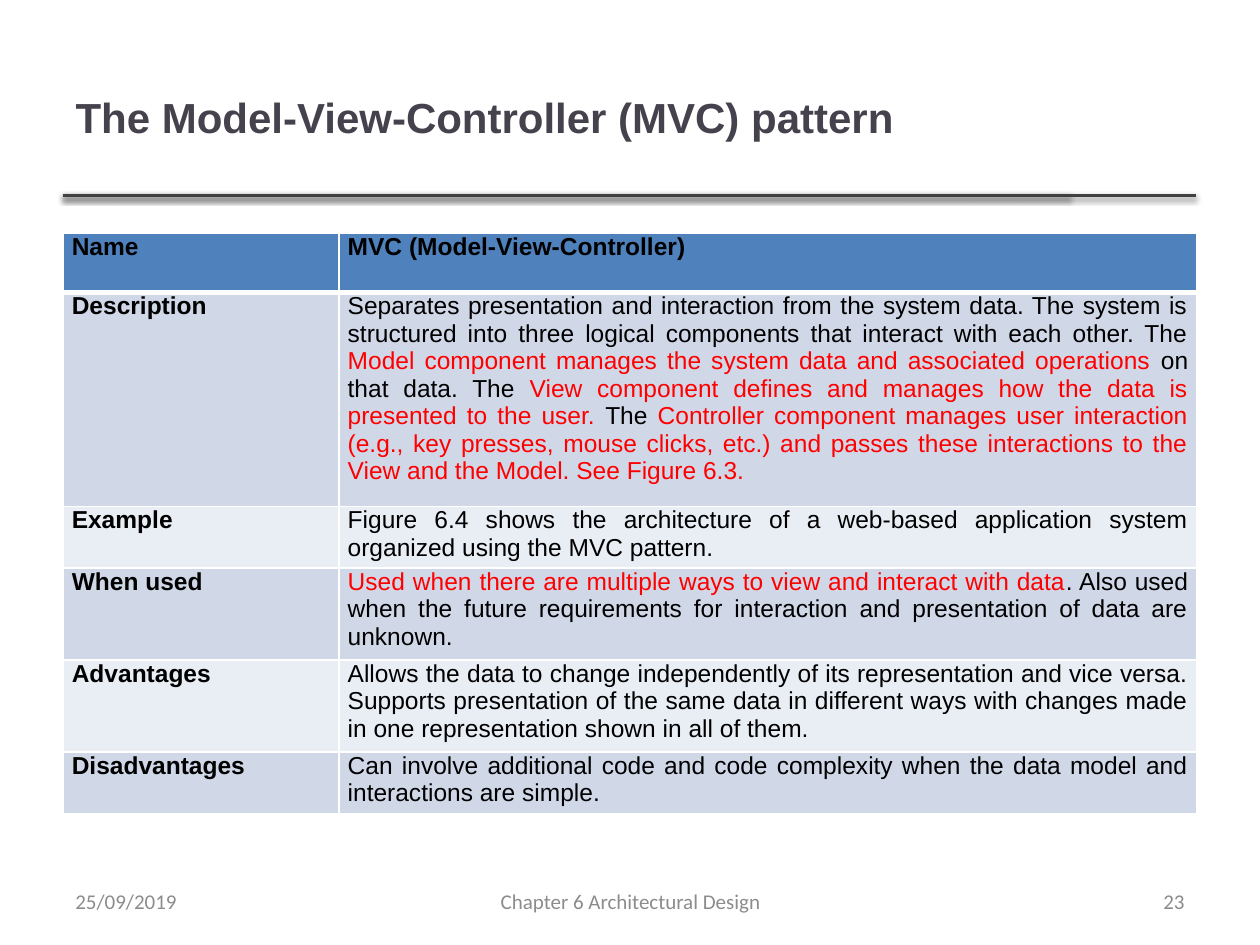
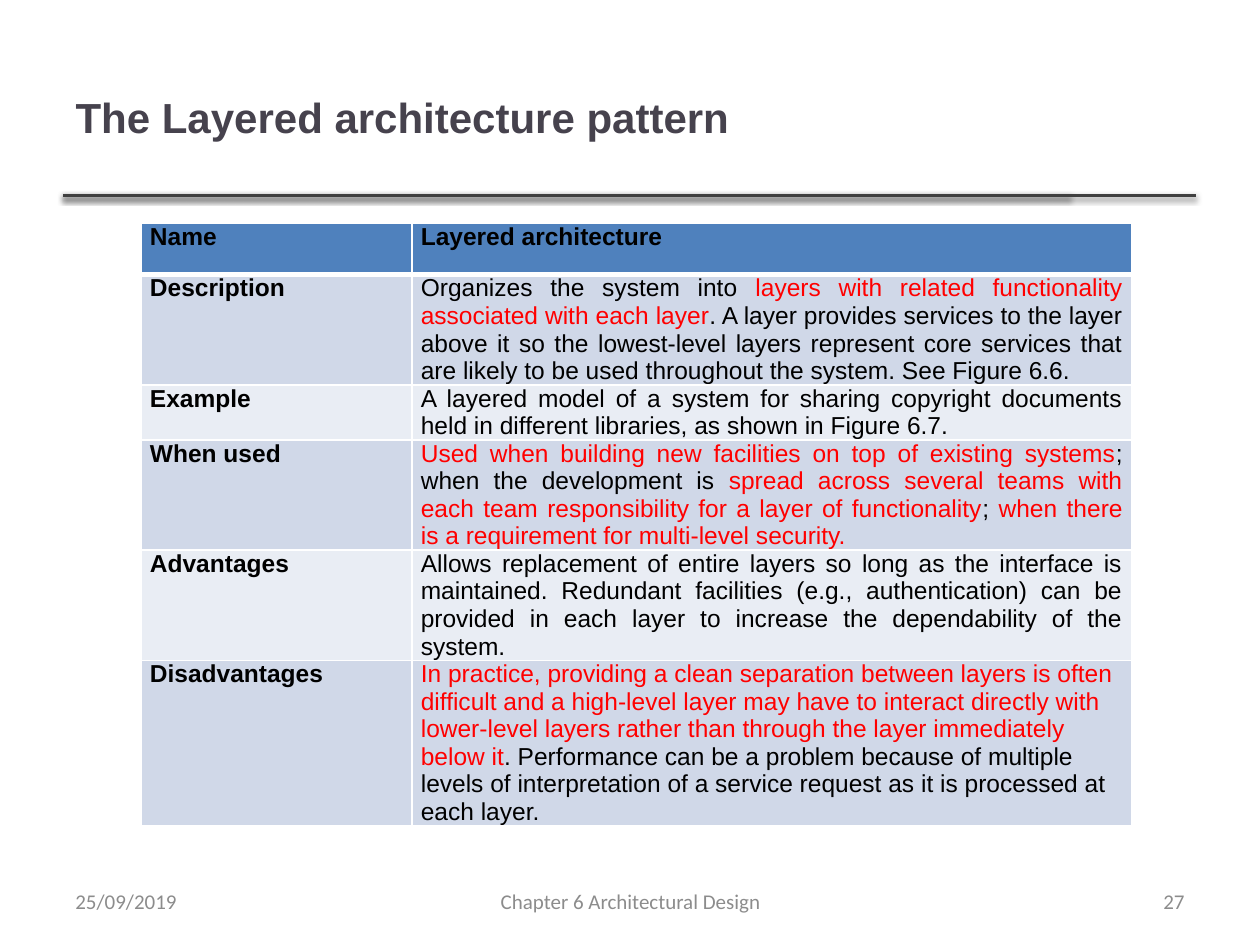
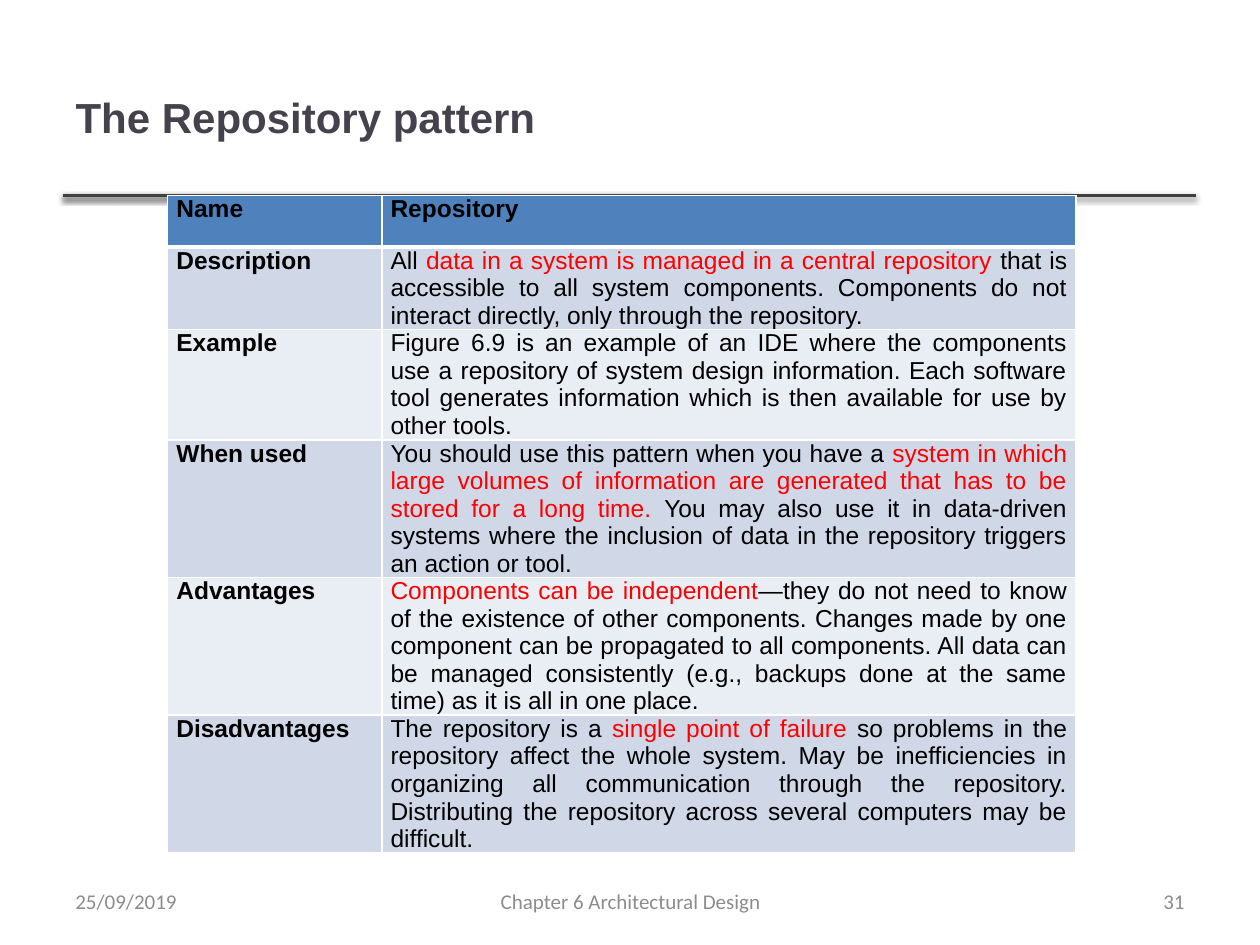
from dataclasses import dataclass

from lxml import etree
from pptx import Presentation
from pptx.dml.color import RGBColor
from pptx.enum import shapes, text
from pptx.oxml import ns
from pptx.util import Inches, Pt


@dataclass(frozen=True)
class Theme:
    title: str = "46424D"
    rule: str = "404040"
    footer: str = "8C8C8C"
    body: str = "000000"
    accent: str = "FF0000"
    header_fill: str = "4F81BD"
    band_fills: tuple = ("E9EDF4", "D0D8E8")
    border: str = "FFFFFF"
    font: str = "Arial"
    footer_font: str = "Calibri"
    title_size: int = 24
    table_size: int = 14
    footer_size: int = 12


THEME = Theme()
ALIGN = text.PP_ALIGN

# Content: text between asterisks is highlighted
LABELS = ["Name", "Description", "Example", "When used", "Advantages", "Disadvantages"]
PATTERNS = [
    {
        "title": "The Model-View-Controller (MVC) pattern",
        "number": "23",
        "box": (0.5, 1.85, 9, 4.6),
        "label_width": 2.19,
        "row_heights": [0.47, 1.7, 0.49, 0.73, 0.73, 0.49],
        "last_align": ALIGN.JUSTIFY,
        "entries": [
            "MVC (Model-View-Controller)",
            "Separates presentation and interaction from the system data. The system is "
            "structured into three logical components that interact with each other. The "
            "*Model component manages the system data and associated operations *on that "
            "data. The *View component defines and manages how the data is presented to the "
            "user. *The *Controller component manages user interaction (e.g., key presses, "
            "mouse clicks, etc.) and passes these interactions to the View and the Model. "
            "See Figure 6.3.*",
            "Figure 6.4 shows the architecture of a web-based application system organized "
            "using the MVC pattern.",
            "*Used when there are multiple ways to view and interact with data*. Also used "
            "when the future requirements for interaction and presentation of data are "
            "unknown.",
            "Allows the data to change independently of its representation and vice versa. "
            "Supports presentation of the same data in different ways with changes made in "
            "one representation shown in all of them.",
            "Can involve additional code and code complexity when the data model and "
            "interactions are simple.",
        ],
    },
    {
        "title": "The Layered architecture pattern",
        "number": "27",
        "box": (1.12, 1.77, 7.86, 5.07),
        "label_width": 2.15,
        "row_heights": [0.41] * 6,
        "last_align": ALIGN.LEFT,
        "entries": [
            "Layered architecture",
            "Organizes the system into *layers with related functionality associated with "
            "each layer*. A layer provides services to the layer above it so the "
            "lowest-level layers represent core services that are likely to be used "
            "throughout the system. See Figure 6.6.",
            "A layered model of a system for sharing copyright documents held in different "
            "libraries, as shown in Figure 6.7.",
            "*Used when building new facilities on top of existing systems*; when the "
            "development is *spread across several teams with each team responsibility for "
            "a layer of functionality*; *when there is a requirement for multi-level "
            "security.*",
            "Allows replacement of entire layers so long as the interface is maintained. "
            "Redundant facilities (e.g., authentication) can be provided in each layer to "
            "increase the dependability of the system.",
            "*In practice, providing a clean separation between layers is often difficult "
            "and a high-level layer may have to interact directly with lower-level layers "
            "rather than through the layer immediately below it*. Performance can be a "
            "problem because of multiple levels of interpretation of a service request as "
            "it is processed at each layer.",
        ],
    },
    {
        "title": "The Repository pattern",
        "number": "31",
        "box": (1.33, 1.55, 7.21, 5.54),
        "label_width": 1.7,
        "row_heights": [0.41] * 6,
        "last_align": ALIGN.JUSTIFY,
        "entries": [
            "Repository",
            "All *data in a system is managed in a central repository *that is accessible "
            "to all system components. Components do not interact directly, only through "
            "the repository.",
            "Figure 6.9 is an example of an IDE where the components use a repository of "
            "system design information. Each software tool generates information which is "
            "then available for use by other tools.",
            "You should use this pattern when you have a *system in which large volumes of "
            "information are generated that has to be stored for a long time. *You may also "
            "use it in data-driven systems where the inclusion of data in the repository "
            "triggers an action or tool.",
            "*Components can be independent*—they do not need to know of the existence of "
            "other components. Changes made by one component can be propagated to all "
            "components. All data can be managed consistently (e.g., backups done at the "
            "same time) as it is all in one place.",
            "The repository is a *single point of failure *so problems in the repository "
            "affect the whole system. May be inefficiencies in organizing all communication "
            "through the repository. Distributing the repository across several computers "
            "may be difficult.",
        ],
    },
]
FOOTER = {"date": "25/09/2019", "chapter": "Chapter 6 Architectural Design"}

# Shared geometry, in inches
TITLE_BOX = (0.5, 0.3, 7.98, 1.25)
RULE_LEFT, RULE_TOP, RULE_ENDS = 0.5, 1.55, (8.49, 9.49)
FOOTER_TOP, FOOTER_HEIGHT = 6.95, 0.4
CELL_MARGIN = 0.07


def set_values(target, **values):
    for name, value in values.items():
        setattr(target, name, value)


def inches(values):
    return [Inches(value) for value in values]


def set_font(font, name, size, color, bold=False):
    set_values(font, name=name, size=Pt(size), bold=bold)
    font.color.rgb = RGBColor.from_string(color)


def add_child(parent, tag, **attributes):
    child = etree.SubElement(parent, ns.qn(tag))
    for name, value in attributes.items():
        child.set(name, str(value))
    return child


# Title, footer and rule
def fill_title(slide, title):
    shape = slide.shapes.title
    left, top, width, height = inches(TITLE_BOX)
    set_values(shape, left=left, top=top, width=width, height=height)
    frame = shape.text_frame
    frame.text = title
    set_values(frame, auto_size=text.MSO_AUTO_SIZE.NONE, word_wrap=True,
               vertical_anchor=text.MSO_ANCHOR.MIDDLE)
    paragraph = frame.paragraphs[0]
    paragraph.alignment = ALIGN.LEFT
    set_font(paragraph.font, THEME.font, THEME.title_size, THEME.title, True)


def add_footer(slide, number):
    parts = [
        (FOOTER["chapter"], 3.42, 3.17, ALIGN.CENTER),
        (number, 7.17, 2.33, ALIGN.RIGHT),
        (FOOTER["date"], 0.5, 2.33, ALIGN.LEFT),
    ]
    for words, left, width, alignment in parts:
        box = slide.shapes.add_textbox(*inches((left, FOOTER_TOP, width, FOOTER_HEIGHT)))
        frame = box.text_frame
        frame.text = words
        set_values(frame, word_wrap=True, vertical_anchor=text.MSO_ANCHOR.MIDDLE)
        paragraph = frame.paragraphs[0]
        paragraph.alignment = alignment
        set_font(paragraph.font, THEME.footer_font, THEME.footer_size, THEME.footer)


def add_rules(slide, layout):
    """Draw the shadowed title rules and move them to the shared layout."""
    rules = []
    for end in RULE_ENDS:
        rule = slide.shapes.add_connector(
            shapes.MSO_CONNECTOR.STRAIGHT, *inches((RULE_LEFT, RULE_TOP, end, RULE_TOP)))
        rule.line.width = Pt(2)
        rule.line.color.rgb = RGBColor.from_string(THEME.rule)
        effects = add_child(rule._element.spPr, "a:effectLst")
        shadow = add_child(effects, "a:outerShdw", blurRad=Pt(3.1), dist=Pt(1.6),
                           dir=90 * 60000, rotWithShape=0)
        add_child(add_child(shadow, "a:srgbClr", val="000000"), "a:alpha", val=38000)
        rules.append(rule)
    for rule in rules:
        layout.shapes._spTree.append(rule._element)


# Pattern table
def set_borders(cell, row):
    properties = cell._tc.get_or_add_tcPr()
    widths = {"L": 1, "R": 1, "T": 3 if row == 1 else 1, "B": 3 if row == 0 else 1}
    for position, (side, width) in enumerate(widths.items()):
        line = add_child(properties, f"a:ln{side}", w=Pt(width))
        add_child(add_child(line, "a:solidFill"), "a:srgbClr", val=THEME.border)
        properties.insert(position, line)


def fill_cell(cell, row, words, bold, alignment):
    margin = Inches(CELL_MARGIN)
    set_values(cell, margin_left=margin, margin_right=margin, margin_top=0, margin_bottom=0)
    cell.fill.solid()
    fill = THEME.band_fills[row % 2] if row else THEME.header_fill
    cell.fill.fore_color.rgb = RGBColor.from_string(fill)
    set_borders(cell, row)
    paragraph = cell.text_frame.paragraphs[0]
    paragraph.alignment = alignment
    for index, part in enumerate(words.split("*")):
        if part:
            run = paragraph.add_run()
            run.text = part
            color = THEME.accent if index % 2 else THEME.body
            set_font(run.font, THEME.font, THEME.table_size, color, bold)


def add_pattern_table(slide, pattern):
    box = inches(pattern["box"])
    frame = slide.shapes.add_table(len(LABELS), 2, *box)
    table = frame.table
    label_width = Inches(pattern["label_width"])
    table.columns[0].width = label_width
    table.columns[1].width = box[2] - label_width
    last = len(LABELS) - 1
    for row, entry in enumerate(zip(LABELS, pattern["entries"])):
        table.rows[row].height = Inches(pattern["row_heights"][row])
        for column, words in enumerate(entry):
            is_last = (row, column) == (last, 1)
            alignment = pattern["last_align"] if is_last else ALIGN.JUSTIFY
            fill_cell(table.cell(row, column), row, words, row == 0 or column == 0, alignment)
    frame.height = box[3]


def main():
    presentation = Presentation()
    set_values(presentation, slide_width=Inches(10), slide_height=Inches(7.5))
    layout = presentation.slide_layouts[5]
    for pattern in PATTERNS:
        slide = presentation.slides.add_slide(layout)
        fill_title(slide, pattern["title"])
        add_pattern_table(slide, pattern)
        add_footer(slide, pattern["number"])
    add_rules(slide, layout)
    presentation.save("out.pptx")


if __name__ == "__main__":
    main()
